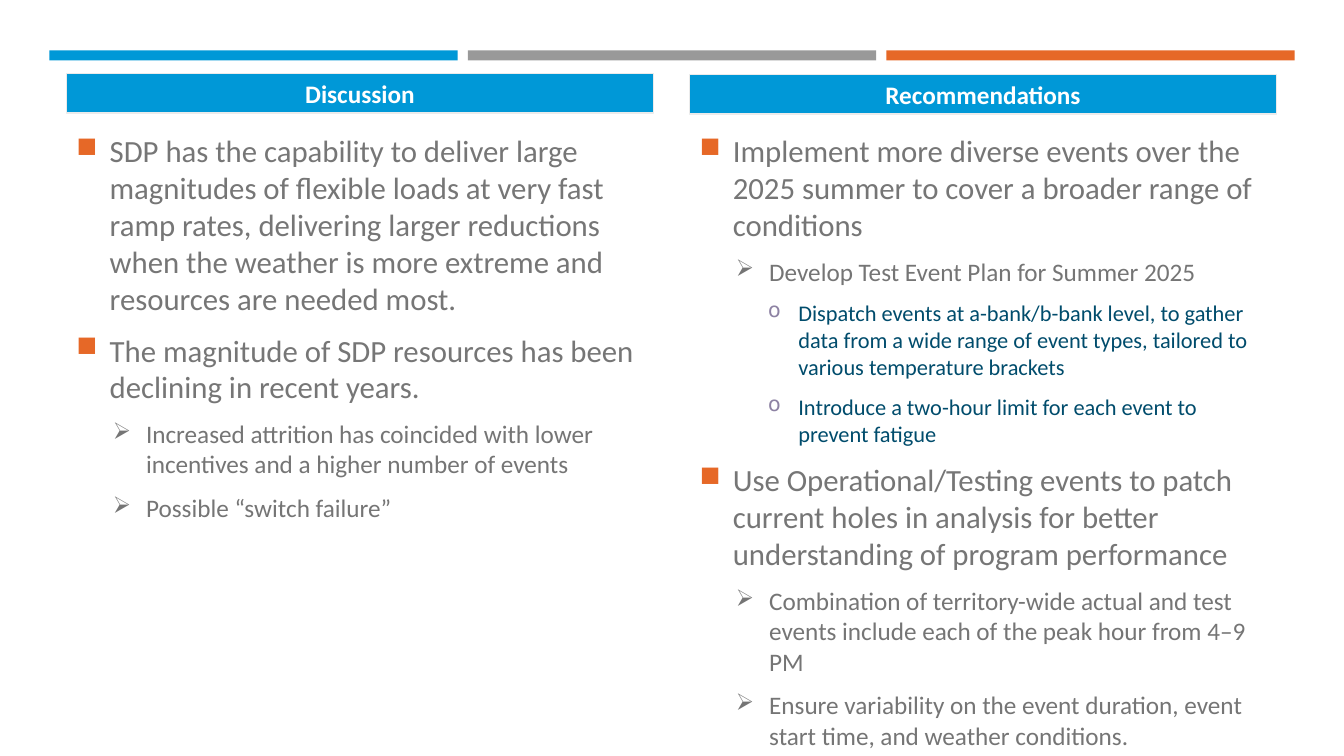
from pptx import Presentation
from pptx.dml.color import RGBColor
from pptx.enum.shapes import MSO_SHAPE
from pptx.enum.text import MSO_ANCHOR, PP_ALIGN
from pptx.oxml.ns import qn
from pptx.util import Inches, Pt
from lxml.etree import SubElement

COLUMNS = [
    ("Discussion", 0.73, 5.44, [
        (0, "SDP has the capability to deliver large magnitudes of flexible loads at very fast ramp rates, "
            "delivering larger reductions when the weather is more extreme and resources are needed most."),
        (0, "The magnitude of SDP resources has been declining in recent years."),
        (1, "Increased attrition has coincided with lower incentives and a higher number of events"),
        (1, "Possible “switch failure”"),
    ]),
    ("Recommendations", 0.74, 5.81, [
        (0, "Implement more diverse events over the 2025 summer to cover a broader range of conditions"),
        (1, "Develop Test Event Plan for Summer 2025"),
        (2, "Dispatch events at a-bank/b-bank level, to gather data from a wide range of event types, "
            "tailored to various temperature brackets"),
        (2, "Introduce a two-hour limit for each event to prevent fatigue"),
        (0, "Use Operational/Testing events to patch current holes in analysis for better understanding "
            "of program performance"),
        (1, "Combination of territory-wide actual and test events include each of the peak hour from 4–9 PM"),
        (1, "Ensure variability on the event duration, event start time, and weather conditions."),
    ]),
]

THEME = {
    "font": "Calibri",
    "blue": "0098D7",
    "gray": "999999",
    "orange": "E66827",
    "edge": "EBEBEB",
    "white": "FFFFFF",
    "head": 18,
    "levels": [
        {"size": 22, "color": "767676", "mark": "■", "tint": "E66827", "left": 0.33, "hang": 0.33},
        {"size": 18, "color": "757575", "mark": "➢", "tint": "757575", "left": 0.69, "hang": 0.33},
        {"size": 16, "color": "004C6C", "mark": "o", "tint": "8D82A3", "left": 0.98, "hang": 0.3},
    ],
}

LEFT, STEP, WIDTH = 0.66, 6.18, 5.82
BAR_LEFT, BAR_STEP, BAR_WIDTH = 0.49, 4.15, 4.05


def add_rect(slide, left, top, width, height, fill, edge=None):
    rect = slide.shapes.add_shape(
        MSO_SHAPE.RECTANGLE, Inches(left), Inches(top), Inches(width), Inches(height))
    rect.shadow.inherit = False
    rect.fill.solid()
    rect.fill.fore_color.rgb = RGBColor.from_string(fill)
    if edge:
        rect.line.color.rgb = RGBColor.from_string(edge)
        rect.line.width = Pt(1)
    else:
        rect.line.fill.background()
    return rect


def add_mark(para, mark, tint, left, hang):
    props = para._p.get_or_add_pPr()
    props.set("marL", str(Inches(left)))
    props.set("indent", str(-Inches(hang)))
    color = SubElement(props, qn("a:buClr"))
    SubElement(color, qn("a:srgbClr"), val=tint)
    SubElement(props, qn("a:buSzPct"), val="92000")
    SubElement(props, qn("a:buChar"), char=mark)


def write(frame, text, first=True, size=18, color="FFFFFF", bold=False,
          align=PP_ALIGN.LEFT, level=0, **bullet):
    para = frame.paragraphs[0] if first else frame.add_paragraph()
    para.level = level
    if bullet:
        add_mark(para, **bullet)
    para.alignment = align
    para.space_before = Pt(0 if first else size * 0.2)
    para.space_after = Pt(6)
    run = para.add_run()
    run.text = text
    run.font.name = THEME["font"]
    run.font.size = Pt(size)
    run.font.bold = bold
    run.font.color.rgb = RGBColor.from_string(color)


def main():
    deck = Presentation()
    deck.slide_width, deck.slide_height = Inches(13.33), Inches(7.5)
    slide = deck.slides.add_slide(deck.slide_layouts[6])

    for i, name in enumerate(("blue", "gray", "orange")):
        add_rect(slide, BAR_LEFT + i * BAR_STEP, 0.5, BAR_WIDTH, 0.1, THEME[name])

    for i, (title, top, height, points) in enumerate(COLUMNS):
        left = LEFT + i * STEP
        body = slide.shapes.add_textbox(
            Inches(left), Inches(1.26), Inches(WIDTH), Inches(height)).text_frame
        body.word_wrap = True
        for j, (level, text) in enumerate(points):
            write(body, text, first=j == 0, level=level, **THEME["levels"][level])

        head = add_rect(slide, left, top, WIDTH, 0.39, THEME["blue"], THEME["edge"]).text_frame
        head.word_wrap = True
        head.vertical_anchor = MSO_ANCHOR.MIDDLE
        head.margin_left = head.margin_right = Inches(0.09)
        head.margin_top = head.margin_bottom = Inches(0.04)
        write(head, title, size=THEME["head"], color=THEME["white"], bold=True, align=PP_ALIGN.CENTER)
        head.paragraphs[0].space_after = Pt(0)

    deck.save("out.pptx")


if __name__ == "__main__":
    main()
